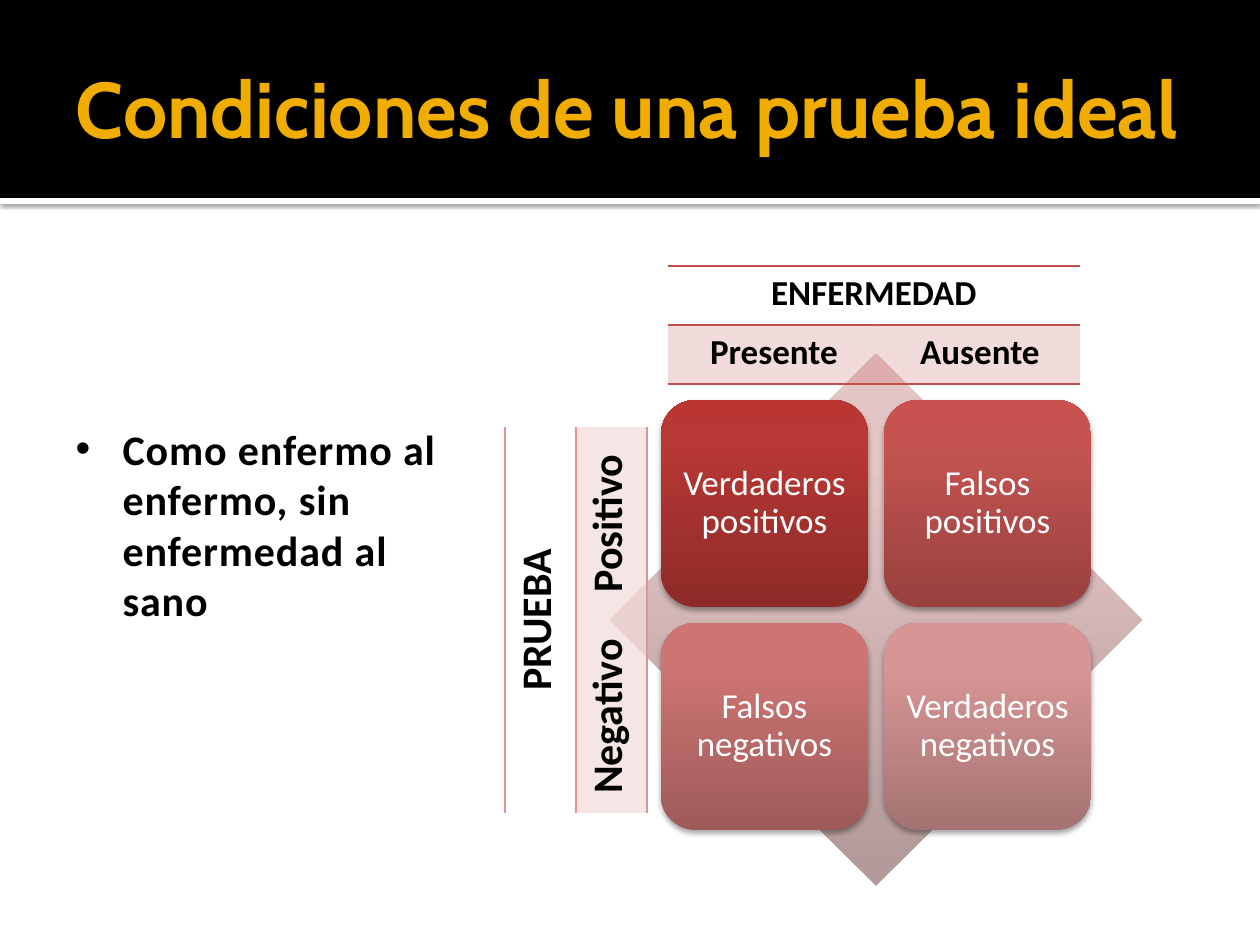
import pptx
import pptx.util
import pptx.dml.color
import pptx.enum.shapes
import pptx.enum.text
import pptx.oxml
import pptx.oxml.ns

EMU_PER_PX = 914400 / 126
COLORS = {
    "band": "000000", "strip": "FFFFFF", "title": "F0AD00",
    "text": "000000", "tile_text": "FFFFFF",
    "disease": "C0504D", "test_border": "D99694", "test": "F2DCDB",
}
DIAMOND_GRADIENT = ("B09998", "E5C6C6", "E6C7C6")
TILES = (
    ("Verdaderos positivos", ("8E2B28", "B83835", "BB3632")),
    ("Falsos positivos", ("98413F", "C55451", "C95250")),
    ("Falsos negativos", ("9E5A59", "CE7574", "D07472")),
    ("Verdaderos negativos", ("A57373", "D79695", "D99594")),
)
SHAPE = pptx.enum.shapes.MSO_SHAPE
ALIGN = pptx.enum.text.PP_ALIGN
ANCHOR = pptx.enum.text.MSO_ANCHOR
NO_TABLE_STYLE = "{2D5ABB26-0587-4C30-8999-92F81FD0307C}"


def px(length):
    """Turn pixels into EMU."""
    return pptx.util.Emu(round(length * EMU_PER_PX))


def rgb(name):
    """Return a palette colour."""
    return pptx.dml.color.RGBColor.from_string(COLORS[name])


def xml(markup):
    """Parse DrawingML markup whose root tag ends with its namespace slot."""
    return pptx.oxml.parse_xml(markup.replace("NS", pptx.oxml.ns.nsdecls("a"), 1))


def add_run(paragraph, text, size, color, bold=False, font="Calibri"):
    """Add one formatted run."""
    run = paragraph.add_run()
    run.text = text
    run.font.name = font
    run.font.size = pptx.util.Pt(size)
    run.font.bold = bold
    run.font.color.rgb = rgb(color)
    return run


def place(shape, left, top, width, height):
    """Move and size a shape in pixels."""
    shape.left, shape.top = px(left), px(top)
    shape.width, shape.height = px(width), px(height)


def add_plain_shape(slide, kind, box):
    """Add a preset shape with no outline and no shadow."""
    shape = slide.shapes.add_shape(kind, *map(px, box))
    shape.shadow.inherit = False
    shape.line.fill.background()
    return shape


def add_band(slide, box, color):
    """Add a solid header band."""
    band = add_plain_shape(slide, SHAPE.RECTANGLE, box)
    band.fill.solid()
    band.fill.fore_color.rgb = rgb(color)
    return band


def set_gradient(shape, shades):
    """Fill a shape with three shades from bottom to top."""
    shape.fill.gradient()
    shape.fill.gradient_angle = 90
    stops = shape._element.spPr.find(".//" + pptx.oxml.ns.qn("a:gsLst"))
    for stop in list(stops):
        stops.remove(stop)
    for position, shade in zip((0, 80, 100), shades):
        stops.append(xml(f'<a:gs NS pos="{position * 1000}"><a:srgbClr val="{shade}"/></a:gs>'))


def set_shadow(shape, opacity, blur, distance):
    """Drop a black shadow straight down, in percent and points."""
    effects = shape._element.spPr.find(pptx.oxml.ns.qn("a:effectLst"))
    effects.append(xml(
        f'<a:outerShdw NS blurRad="{pptx.util.Pt(blur)}" dist="{pptx.util.Pt(distance)}" '
        f'dir="5400000" rotWithShape="0"><a:srgbClr val="000000">'
        f'<a:alpha val="{opacity * 1000}"/></a:srgbClr></a:outerShdw>'))


def add_title(slide, text):
    """Place the title over the header bands."""
    title = slide.shapes.title
    slide.shapes._spTree.append(title._element)
    place(title, 63, 21, 1134, 173)
    frame = title.text_frame
    frame.vertical_anchor = ANCHOR.MIDDLE
    frame.margin_left, frame.margin_right = px(13), px(6)
    frame.paragraphs[0].alignment = ALIGN.LEFT
    add_run(frame.paragraphs[0], text, 45, "title", True, "Cabin")


def add_condition(slide, text):
    """Write the bulleted condition in the body placeholder."""
    body = slide.placeholders[1]
    place(body, 63, 417, 430, 232)
    paragraph = body.text_frame.paragraphs[0]
    properties = paragraph._p.get_or_add_pPr()
    properties.set("marL", str(px(47)))
    properties.set("indent", str(px(-47)))
    properties.append(xml('<a:buChar NS char="•"/>'))
    paragraph.space_before = pptx.util.Pt(0)
    run = add_run(paragraph, text, 24, "text", True)
    run.font._element.set("spc", "50")


def add_tile(slide, box, text, shades):
    """Add one outcome tile of the matrix."""
    tile = add_plain_shape(slide, SHAPE.ROUNDED_RECTANGLE, box)
    set_gradient(tile, shades)
    set_shadow(tile, 35, 3.1, 1.8)
    frame = tile.text_frame
    frame.word_wrap = True
    frame.vertical_anchor = ANCHOR.MIDDLE
    frame.margin_left = frame.margin_right = px(5)
    paragraph = frame.paragraphs[0]
    paragraph.alignment = ALIGN.CENTER
    paragraph.line_spacing = 0.9
    add_run(paragraph, text, 20, "tile_text")


def add_matrix(slide):
    """Add the diamond and its two by two tiles."""
    diamond = add_plain_shape(slide, SHAPE.DIAMOND, (610, 354, 532, 532))
    set_gradient(diamond, DIAMOND_GRADIENT)
    for index, (text, shades) in enumerate(TILES):
        row, column = divmod(index, 2)
        add_tile(slide, (661 + 223 * column, 400 + 223 * row, 207, 207), text, shades)


def format_cell(cell, sides, border, shade, opacity):
    """Set the borders of a cell and its fill, if it has one."""
    properties = cell._tc.get_or_add_tcPr()
    for side in sides:
        properties.append(xml(
            f'<a:ln{side} NS w="12700"><a:solidFill><a:srgbClr val="{COLORS[border]}"/>'
            f'</a:solidFill></a:ln{side}>'))
    if shade is None:
        cell.fill.background()
        return
    cell.fill.solid()
    cell.fill.fore_color.rgb = rgb(shade)
    color = properties.find(pptx.oxml.ns.qn("a:solidFill"))[0]
    color.append(xml(f'<a:alpha NS val="{opacity * 1000}"/>'))


def add_heading_table(slide, origin, widths, heights, heading, levels, size,
                      border, shade, opacity, vertical=False):
    """Add a heading that spans two levels, across or turned upwards."""
    box = (*origin, sum(widths), sum(heights))
    table = slide.shapes.add_table(2, 2, *map(px, box)).table
    table.first_row = table.horz_banding = False
    table._tbl.tblPr[0].text = NO_TABLE_STYLE
    for column, width in zip(table.columns, widths):
        column.width = px(width)
    for row, height in zip(table.rows, heights):
        row.height = px(height)
    span_end = (1, 0) if vertical else (0, 1)
    level_cells = ((0, 1), (1, 1)) if vertical else ((1, 0), (1, 1))
    table.cell(0, 0).merge(table.cell(*span_end))
    texts = {(0, 0): heading, **dict(zip(level_cells, levels))}
    for position in ((0, 0), span_end, *level_cells):
        cell = table.cell(*position)
        format_cell(cell, "LR" if vertical else "TB", border,
                    shade if position in level_cells else None, opacity)
        if vertical:
            cell._tc.tcPr.set("vert", "vert270")
        if position in texts:
            paragraph = cell.text_frame.paragraphs[0]
            paragraph.alignment = ALIGN.CENTER
            add_run(paragraph, texts[position], size, "text", True)


def main():
    """Build the slide and save it."""
    presentation = pptx.Presentation()
    presentation.slide_width, presentation.slide_height = px(1260), px(945)
    slide = presentation.slides.add_slide(presentation.slide_layouts[1])
    strip = add_band(slide, (0, 198, 1260, 6), "strip")
    set_shadow(strip, 60, 2.5, 0.8)
    add_band(slide, (0, 0, 1260, 198), "band")
    add_title(slide, "Condiciones de una prueba ideal")
    add_condition(slide, "Como enfermo al enfermo, sin enfermedad al sano")
    add_matrix(slide)
    add_heading_table(slide, (668, 266), (212, 200), (59, 59), "ENFERMEDAD",
                      ("Presente", "Ausente"), 20, "disease", "disease", 20)
    add_heading_table(slide, (505, 427), (71, 71), (193, 193), "PRUEBA",
                      ("Positivo", "Negativo"), 24, "test_border", "test", 73, True)
    presentation.save("out.pptx")


if __name__ == "__main__":
    main()
